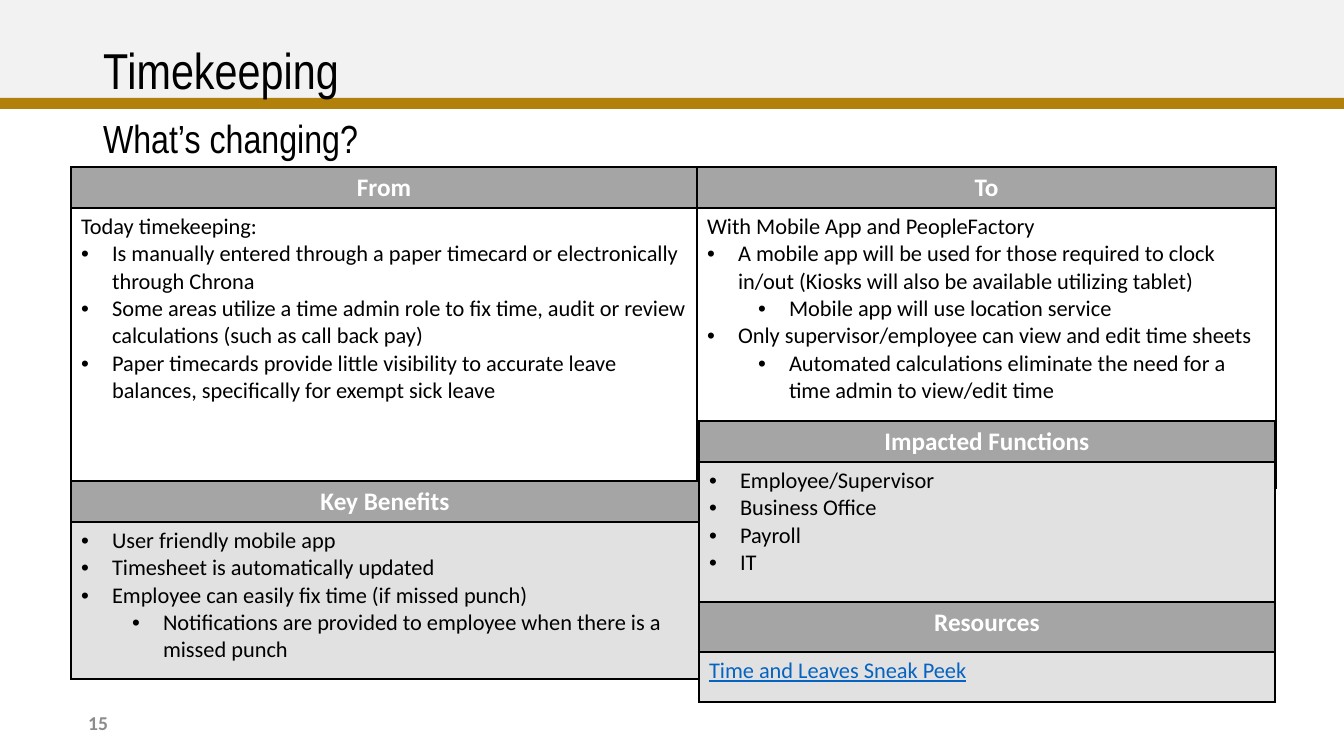
from lxml.etree import SubElement
from pptx import Presentation
from pptx.dml.color import RGBColor
from pptx.enum.shapes import MSO_SHAPE
from pptx.enum.text import MSO_ANCHOR, MSO_AUTO_SIZE, PP_ALIGN
from pptx.oxml.ns import qn
from pptx.util import Pt

PX = 9071  # EMU in one pixel
HEADING, BODY = "Arial Narrow", "Calibri"
LEAD, POINT, SUBPOINT, LINK = "lead", "point", "subpoint", "link"
INDENTS = {POINT: 31, SUBPOINT: 82}


def rgb(hex_color):
    return RGBColor.from_string(hex_color)


def format_text(paragraph, color, **values):
    for name, value in values.items():
        setattr(paragraph.font, name, value)
    paragraph.font.color.rgb = rgb(color)


presentation = Presentation()
presentation.slide_width, presentation.slide_height = 1344 * PX, 756 * PX
slide = presentation.slides.add_slide(presentation.slide_layouts[1])
title, subtitle = slide.placeholders

# Header bands, behind the title
for top, width, height, color in ((0, 1346, 107, "F2F2F2"), (98, 1344, 11, "B1810B")):
    band = slide.shapes.add_shape(MSO_SHAPE.RECTANGLE, 0, top * PX, width * PX, height * PX)
    band.shadow.inherit = False
    band.fill.solid()
    band.fill.fore_color.rgb = rgb(color)
    band.line.fill.background()
    title.element.addprevious(band.element)

# Title and subtitle
for heading, text, top, height, size, anchor in (
    (title, "Timekeeping", 40, 67, 36, MSO_ANCHOR.MIDDLE),
    (subtitle, "What’s changing?", 115, 40, 28, MSO_ANCHOR.TOP),
):
    heading.left, heading.top = 93 * PX, top * PX
    heading.width, heading.height = 1159 * PX, height * PX
    frame = heading.text_frame
    frame.text = text
    frame.auto_size = MSO_AUTO_SIZE.NONE
    frame.vertical_anchor = anchor
    line = frame.paragraphs[0]
    line.alignment = PP_ALIGN.LEFT
    line.line_spacing = 0.9
    line.space_before = Pt(0)
    properties = line._p.get_or_add_pPr()
    properties.set("marL", "0")
    properties.set("indent", "0")
    SubElement(properties, qn("a:buNone"))
    format_text(line, "000000", name=HEADING, size=Pt(size))

# Page number
page_number = slide.shapes.add_textbox(68 * PX, 703 * PX, 50 * PX, 40 * PX).text_frame
page_number.word_wrap = True
page_number.vertical_anchor = MSO_ANCHOR.MIDDLE
page_number.text = "15"
page_number.paragraphs[0].alignment = PP_ALIGN.RIGHT
format_text(page_number.paragraphs[0], "8C8C8C", name=BODY, size=Pt(14), bold=True)

# Panels: left, top, row heights, body fill, then (width, header, lines) per column
panels = (
    (71, 167, (41, 280), "FFFFFF", (
        (626, "From", (
            (LEAD, "Today timekeeping:"),
            (POINT, "Is manually entered through a paper timecard or electronically through Chrona"),
            (POINT, "Some areas utilize a time admin role to fix time, audit or review "
                    "calculations (such as call back pay)"),
            (POINT, "Paper timecards provide little visibility to accurate leave balances, "
                    "specifically for exempt sick leave"),
        )),
        (579, "To", (
            (LEAD, "With Mobile App and PeopleFactory"),
            (POINT, "A mobile app will be used for those required to clock in/out "
                    "(Kiosks will also be available utilizing tablet)"),
            (SUBPOINT, "Mobile app will use location service"),
            (POINT, "Only supervisor/employee can view and edit time sheets"),
            (SUBPOINT, "Automated calculations eliminate the need for a time admin to view/edit time"),
        )),
    )),
    (71, 481, (41, 157), "E1E1E1", (
        (628, "Key Benefits", (
            (POINT, "User friendly mobile app"),
            (POINT, "Timesheet is automatically updated"),
            (POINT, "Employee can easily fix time (if missed punch)"),
            (SUBPOINT, "Notifications are provided to employee when there is a missed punch"),
        )),
    )),
    (699, 421, (41, 144), "E1E1E1", (
        (576, "Impacted Functions", (
            (POINT, "Employee/Supervisor"),
            (POINT, "Business Office"),
            (POINT, "Payroll"),
            (POINT, "IT"),
        )),
    )),
    (699, 602, (50, 50), "E1E1E1", (
        (576, "Resources", ((LINK, "Time and Leaves Sneak Peek"),)),
    )),
)

for left, top, heights, body_fill, columns in panels:
    total_width = sum(column[0] for column in columns)
    panel = slide.shapes.add_table(
        2, len(columns), left * PX, top * PX, total_width * PX, sum(heights) * PX
    ).table
    panel.first_row = panel.horz_banding = False
    for row, height in zip(panel.rows, heights):
        row.height = height * PX

    for index, (width, header, lines) in enumerate(columns):
        panel.columns[index].width = width * PX
        header_cell, body_cell = panel.cell(0, index), panel.cell(1, index)

        # Borders and fills
        for cell, fill in ((header_cell, "A5A5A5"), (body_cell, body_fill)):
            for side in ("lnL", "lnR", "lnT", "lnB"):
                border = SubElement(cell._tc.get_or_add_tcPr(), qn(f"a:{side}"), w=str(Pt(1)))
                SubElement(SubElement(border, qn("a:solidFill")), qn("a:srgbClr"), val="000000")
            cell.fill.solid()
            cell.fill.fore_color.rgb = rgb(fill)

        # Header text
        header_cell.text = header
        header_line = header_cell.text_frame.paragraphs[0]
        header_line.alignment = PP_ALIGN.CENTER
        format_text(header_line, "FFFFFF", name=BODY, size=Pt(18), bold=True)

        # Body lines
        body_cell.text = "\n".join(text for _, text in lines)
        for paragraph, (role, _) in zip(body_cell.text_frame.paragraphs, lines):
            if role in INDENTS:
                paragraph.level = int(role == SUBPOINT)
                properties = paragraph._p.get_or_add_pPr()
                properties.set("marL", str(INDENTS[role] * PX))
                properties.set("indent", str(-INDENTS[POINT] * PX))
                SubElement(properties, qn("a:buFont"), typeface="Arial")
                SubElement(properties, qn("a:buChar"), char="•")
            format_text(paragraph, "0563C1" if role == LINK else "000000",
                        name=BODY, size=Pt(16), bold=False, underline=role == LINK)

presentation.save("out.pptx")
